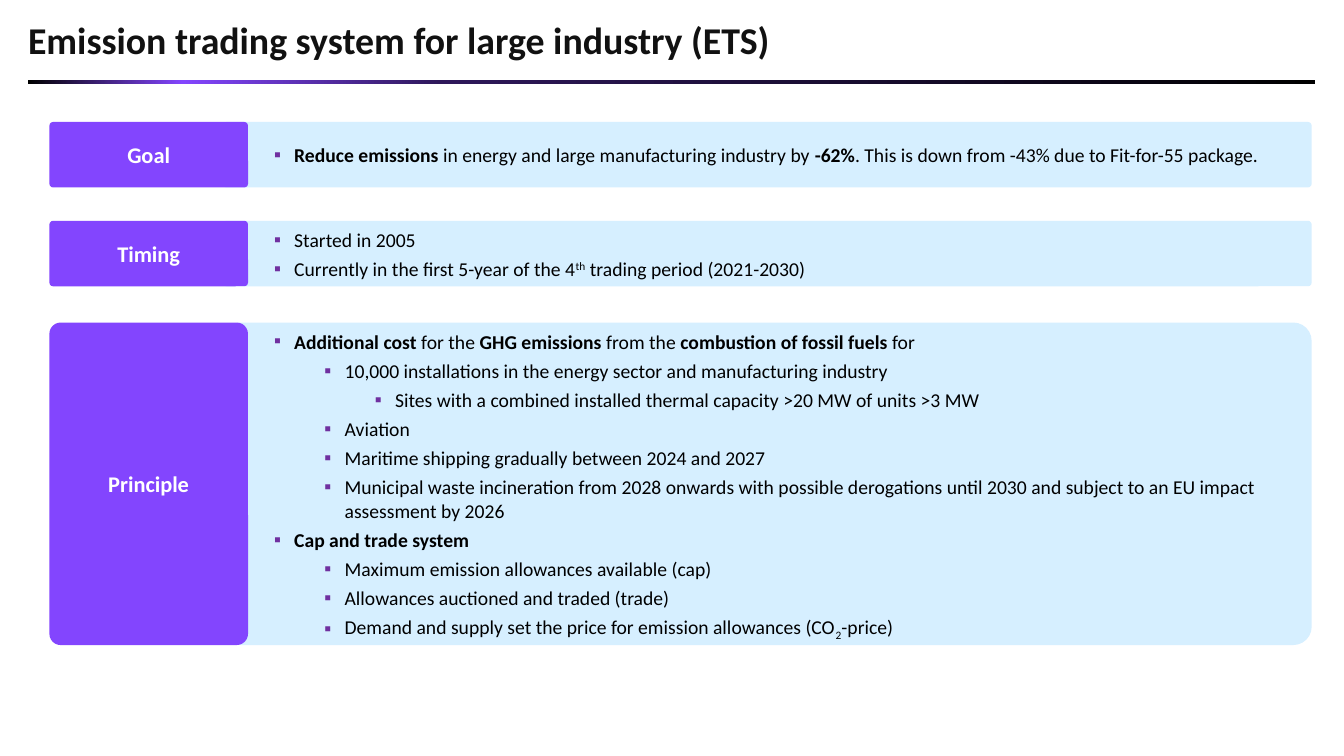
from lxml import etree
from pptx import Presentation
from pptx.dml.color import RGBColor
from pptx.enum import shapes, text
from pptx.oxml.ns import qn
from pptx.util import Inches, Pt

TITLE = "Emission trading system for large industry (ETS)"

# Each point is (level, runs); each run is (words, style).
GOAL = [
    (0, [("Reduce emissions ", "bold"),
         ("in energy and large manufacturing industry by ", ""),
         ("-62%", "bold"),
         (". This is down from -43% due to Fit-for-55 package.", "")]),
]
TIMING = [
    (0, [("Started in 2005", "")]),
    (0, [("Currently in the first 5-year of the 4", ""), ("th", "super"),
         (" trading period (2021-2030)", "")]),
]
PRINCIPLE = [
    (0, [("Additional cost ", "bold"), ("for the ", ""),
         ("GHG emissions ", "bold"), ("from the ", ""),
         ("combustion of fossil fuels ", "bold"), ("for", "")]),
    (1, [("10,000 installations in the energy sector and manufacturing industry", "")]),
    (2, [("Sites with a combined installed thermal capacity >20 MW of units >3 MW", "")]),
    (1, [("Aviation", "")]),
    (1, [("Maritime shipping gradually between 2024 and 2027", "")]),
    (1, [("Municipal waste incineration from 2028 onwards with possible derogations "
          "until 2030 and subject to an EU impact assessment by 2026", "")]),
    (0, [("Cap and trade system", "bold")]),
    (1, [("Maximum emission allowances available (cap)", "")]),
    (1, [("Allowances auctioned and traded (trade)", "")]),
    (1, [("Demand and supply set the price for emission allowances (CO", ""),
         ("2", "sub"), ("-price)", "")]),
]
# label, top, height, top of the points, height of the points, points
ROWS = [
    ("Goal", 1.21, 0.65, 1.37, 0.34, GOAL),
    ("Timing", 2.19, 0.65, 2.21, 0.63, TIMING),
    ("Principle", 3.2, 3.2, 3.22, 3.2, PRINCIPLE),
]

LABEL_LEFT, LABEL_WIDTH = 0.49, 1.97
PANEL_LEFT, PANEL_WIDTH = 2.21, 10.8
POINTS_LEFT, POINTS_WIDTH = 2.62, 10.34
CORNER = 0.057
HANG, LEVEL_STEP = 0.2, 0.5

PURPLE, PALE_BLUE, BULLET = "8345FE", "D6EFFF", "7030A0"
RULE_STOPS = [(0, "000000"), (12, PURPLE), (32, "2E185A"), (100, "000000")]
BASELINES = {"super": "30000", "sub": "-25000"}

TITLE_FONT = {"name": "Calibri", "size": Pt(27), "bold": True}
LABEL_FONT = {"name": "Calibri", "size": Pt(16), "bold": True}
POINT_FONT = {"name": "Calibri", "size": Pt(14)}
TITLE_FRAME = {"word_wrap": True, "vertical_anchor": text.MSO_ANCHOR.MIDDLE,
               "margin_top": Inches(0.04), "margin_bottom": 0}
LABEL_FRAME = {"word_wrap": True, "vertical_anchor": text.MSO_ANCHOR.MIDDLE,
               "margin_left": Inches(0.04), "margin_right": Inches(0.04)}


def rgb(hex_color):
    return RGBColor.from_string(hex_color)


def apply(target, values):
    for key, value in values.items():
        setattr(target, key, value)


def add_run(paragraph, words, font, color):
    run = paragraph.add_run()
    run.text = words
    apply(run.font, font)
    run.font.color.rgb = rgb(color)
    return run


def add_block(kind, left, top, width, height):
    block = slide.shapes.add_shape(
        kind, Inches(left), Inches(top), Inches(width), Inches(height))
    block.shadow.inherit = False
    block.line.fill.background()
    return block


def add_rounded(left, top, width, height, color):
    block = add_block(shapes.MSO_SHAPE.ROUNDED_RECTANGLE, left, top, width, height)
    block.adjustments[0] = CORNER
    block.fill.solid()
    block.fill.fore_color.rgb = rgb(color)
    return block


def add_frame(left, top, width, height):
    return slide.shapes.add_textbox(
        Inches(left), Inches(top), Inches(width), Inches(height)).text_frame


def add_rule():
    """Draw the gradient rule below the title."""
    rule = add_block(shapes.MSO_SHAPE.RECTANGLE, 0.28, 0.79, 12.76, 0.04)
    rule.fill.gradient()
    rule.fill.gradient_angle = 0
    stop_list = next(rule.element.iter(qn("a:gsLst")))
    for old_stop in list(stop_list):
        stop_list.remove(old_stop)
    for percent, color in RULE_STOPS:
        stop = etree.SubElement(stop_list, qn("a:gs"), pos=str(percent * 1000))
        etree.SubElement(stop, qn("a:srgbClr"), val=color)


def set_bullet(paragraph, level):
    paragraph.level = level
    properties = paragraph._p.get_or_add_pPr()
    properties.set("marL", str(Inches(HANG + LEVEL_STEP * level)))
    properties.set("indent", str(Inches(-HANG)))
    color = etree.SubElement(properties, qn("a:buClr"))
    etree.SubElement(color, qn("a:srgbClr"), val=BULLET)
    etree.SubElement(properties, qn("a:buFont"), typeface="Calibri")
    etree.SubElement(properties, qn("a:buChar"), char="▪")
    paragraph.space_after = Pt(4)


def add_points(frame, points):
    frame.word_wrap = True
    for index, (level, runs) in enumerate(points):
        paragraph = frame.add_paragraph() if index else frame.paragraphs[0]
        set_bullet(paragraph, level)
        for words, style in runs:
            run = add_run(paragraph, words, POINT_FONT, "000000")
            run.font.bold = style == "bold"
            if style in BASELINES:
                run.font._element.set("baseline", BASELINES[style])


presentation = Presentation()
presentation.slide_width, presentation.slide_height = Inches(13.33), Inches(7.5)
slide = presentation.slides.add_slide(presentation.slide_layouts[6])

add_rule()
heading = add_frame(0.18, 0.02, 10.41, 0.78)
apply(heading, TITLE_FRAME)
heading.paragraphs[0].line_spacing = 0.8
add_run(heading.paragraphs[0], TITLE, TITLE_FONT, "111111")

for label, top, height, points_top, points_height, points in ROWS:
    add_rounded(PANEL_LEFT, top, PANEL_WIDTH, height, PALE_BLUE)
    tab = add_rounded(LABEL_LEFT, top, LABEL_WIDTH, height, PURPLE).text_frame
    apply(tab, LABEL_FRAME)
    tab.paragraphs[0].alignment = text.PP_ALIGN.CENTER
    add_run(tab.paragraphs[0], label, LABEL_FONT, "FFFFFF")
    add_points(add_frame(POINTS_LEFT, points_top, POINTS_WIDTH, points_height), points)

presentation.save("out.pptx")
